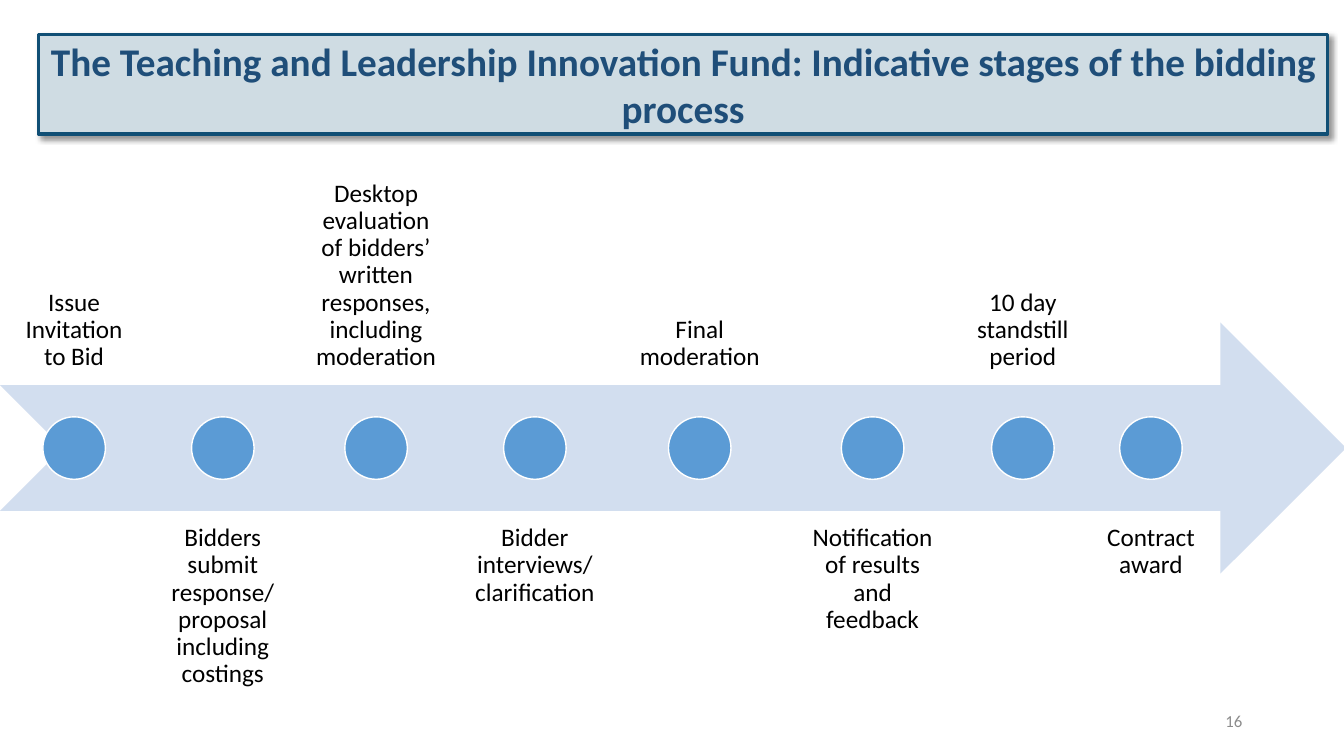
from lxml import etree
from pptx import Presentation
from pptx.dml.color import RGBColor
from pptx.enum.shapes import MSO_SHAPE as Shape
from pptx.enum.text import MSO_ANCHOR as Anchor, PP_ALIGN as Align
from pptx.oxml.ns import qn
from pptx.util import Pt

PX = 9144  # EMU, 100 px to the inch
COLOURS = {
    "title_fill": "CFDCE3",
    "title_line": "104F75",
    "title_text": "1F4E79",
    "arrow": "D2DEEF",
    "dot": "5B9BD5",
    "dot_line": "FFFFFF",
    "label": "000000",
    "number": "8C8C8C",
    "shadow": "000000",
}
STAGES = [  # label, column width
    ("Issue Invitation to Bid", 147),
    ("Bidders submit response/proposal including costings", 136),
    ("Desktop evaluation of bidders’ written responses, including moderation", 156),
    ("Bidder interviews/ clarification", 147),
    ("Final moderation", 168),
    ("Notification of results and feedback", 163),
    ("10 day standstill period", 123),
    ("Contract award", 119),
]
COLUMN_GAP = 6
DOT_SIZE = 62


def colour(name):
    return RGBColor.from_string(COLOURS[name])


def emu(box):
    return [round(length * PX) for length in box]


def add_figure(shapes, kind, box, fill, line=None, line_width=1):
    figure = shapes.add_shape(kind, *emu(box))
    figure.shadow.inherit = False
    figure.fill.solid()
    figure.fill.fore_color.rgb = colour(fill)
    if line:
        figure.line.color.rgb = colour(line)
        figure.line.width = Pt(line_width)
    else:
        figure.line.fill.background()
    return figure


def write(frame, text, *, size, color, bold=False, align=Align.CENTER,
          anchor=Anchor.MIDDLE, inset=None, line_spacing=None):
    frame.word_wrap = True
    frame.vertical_anchor = anchor
    if inset is not None:
        frame.margin_left = frame.margin_right = inset * PX
        frame.margin_top = frame.margin_bottom = inset * PX
    paragraph = frame.paragraphs[0]
    paragraph.alignment = align
    paragraph.line_spacing = line_spacing
    run = paragraph.add_run()
    run.text = text
    run.font.name = "Calibri"
    run.font.size = Pt(size)
    run.font.bold = bold
    run.font.color.rgb = colour(color)


def add_outer_shadow(figure):
    effects = figure._element.spPr.find(qn("a:effectLst"))
    shadow = etree.SubElement(
        effects, qn("a:outerShdw"), blurRad=str(Pt(4)), dist=str(Pt(3)),
        dir=str(45 * 60000), algn="tl", rotWithShape="0")
    tint = etree.SubElement(shadow, qn("a:srgbClr"), val=COLOURS["shadow"])
    etree.SubElement(tint, qn("a:alpha"), val="40000")


def add_title(slide, box):
    banner = add_figure(slide.shapes, Shape.RECTANGLE, box,
                        "title_fill", "title_line", 2.25)
    add_outer_shadow(banner)
    write(banner.text_frame,
          "The Teaching and Leadership Innovation Fund: "
          "Indicative stages of the bidding process",
          size=28, color="title_text", bold=True)


def add_slide_number(slide, box):
    number = slide.shapes.add_textbox(*emu(box))
    write(number.text_frame, "16", size=12, color="number", align=Align.RIGHT)


def add_timeline(slide, box):
    """Arrow through the middle, stage labels alternately above and below."""
    left, top, width, height = box
    band = height * 0.4
    timeline = slide.shapes.add_group_shape().shapes
    add_figure(timeline, Shape.NOTCHED_RIGHT_ARROW,
               (left, top + height * 0.3, width, band), "arrow")
    for index, (label, column) in enumerate(STAGES):
        above = index % 2 == 0
        label_top = top if above else top + height - band
        stage = timeline.add_textbox(*emu((left, label_top, column, band)))
        write(stage.text_frame, label, size=18, color="label", inset=14,
              anchor=Anchor.BOTTOM if above else Anchor.TOP, line_spacing=0.9)
        dot_box = (left + (column - DOT_SIZE) / 2,
                   top + (height - DOT_SIZE) / 2, DOT_SIZE, DOT_SIZE)
        add_figure(timeline, Shape.OVAL, dot_box, "dot", "dot_line")
        left += column + COLUMN_GAP


def main():
    deck = Presentation()
    deck.slide_width, deck.slide_height = emu((1333, 750))
    slide = deck.slides.add_slide(deck.slide_layouts[6])
    add_title(slide, (38, 34, 1279, 99))
    add_slide_number(slide, (942, 695, 300, 40))
    add_timeline(slide, (0, 133, 1335, 623))
    deck.save("out.pptx")


if __name__ == "__main__":
    main()
